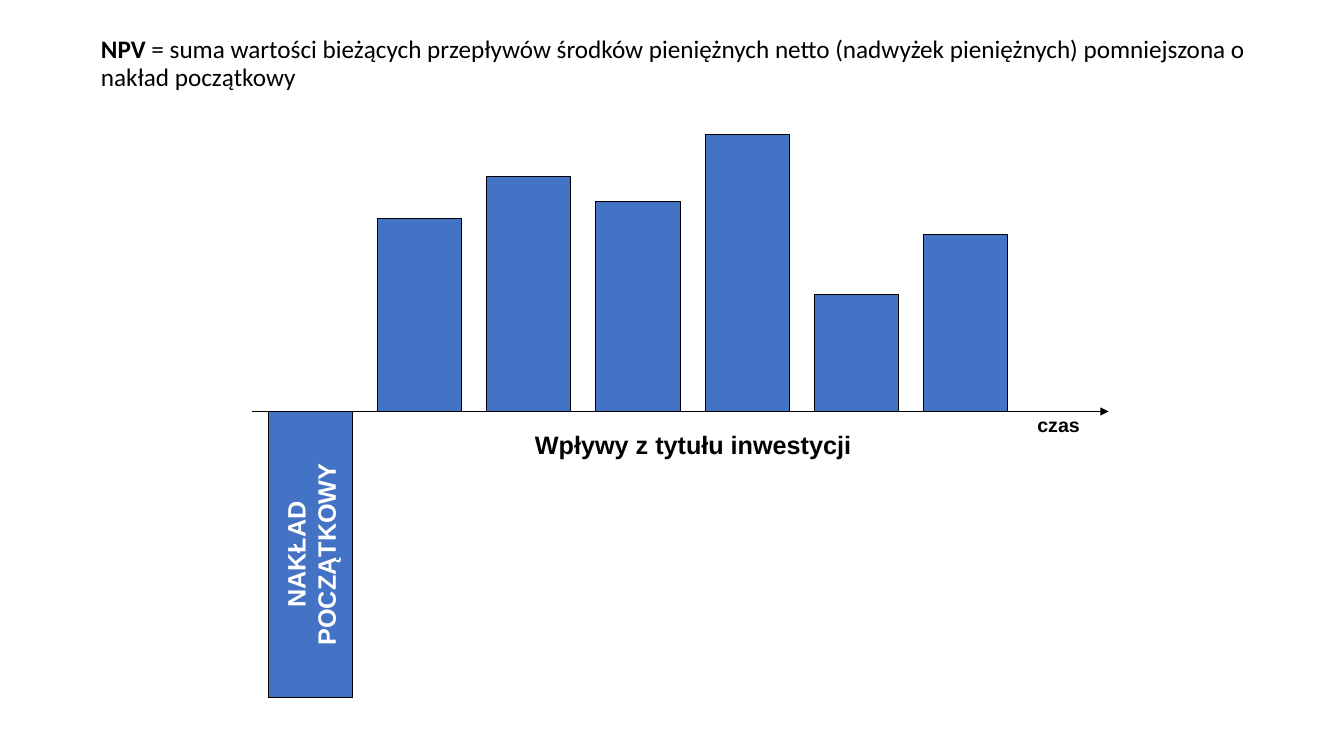
from dataclasses import dataclass

from lxml import etree
from pptx import Presentation
from pptx.dml.color import RGBColor
from pptx.enum import shapes, text
from pptx.oxml import ns
from pptx.util import Cm, Pt

BLACK = RGBColor(0x00, 0x00, 0x00)
WHITE = RGBColor(0xFF, 0xFF, 0xFF)
BLUE = RGBColor(0x44, 0x72, 0xC4)

# Chart geometry in centimetres
AXIS_Y = 10.37
FIRST_SLOT = 6.77
SLOT_STEP = 2.75
BAR_WIDTH = 2.12
OUTLAY = 7.2
INFLOWS = [4.87, 5.93, 5.29, 6.99, 2.96, 4.45]


@dataclass
class Label:
    wording: str
    left: float
    top: float
    width: float
    height: float
    size: int


LABELS = [
    Label("Wpływy z tytułu inwestycji", 9.53, 10.69, 15.88, 1.02, 18),
    Label("czas", 25.7, 10.29, 1.96, 0.84, 14),
]


def style_paragraph(p, size: int, color: RGBColor) -> None:
    p.alignment = text.PP_ALIGN.CENTER
    p.font.name = "Arial"
    p.font.size = Pt(size)
    p.font.bold = True
    p.font.color.rgb = color


def add_bar(s, left: float, top: float, width: float, height: float):
    sp = s.shapes.add_shape(shapes.MSO_SHAPE.RECTANGLE,
                            Cm(left), Cm(top), Cm(width), Cm(height))
    sp.shadow.inherit = False
    sp.fill.solid()
    sp.fill.fore_color.rgb = BLUE
    sp.line.color.rgb = BLACK
    sp.line.width = Pt(0.75)
    return sp


def add_label(s, label: Label) -> None:
    sp = s.shapes.add_textbox(Cm(label.left), Cm(label.top),
                              Cm(label.width), Cm(label.height))
    tf = sp.text_frame
    tf.word_wrap = True
    tf.auto_size = text.MSO_AUTO_SIZE.SHAPE_TO_FIT_TEXT
    tf.text = label.wording
    style_paragraph(tf.paragraphs[0], label.size, BLACK)


def add_time_axis(s) -> None:
    axis = s.shapes.add_connector(shapes.MSO_CONNECTOR.STRAIGHT,
                                  Cm(6.35), Cm(AXIS_Y), Cm(27.94), Cm(AXIS_Y))
    axis.line.color.rgb = BLACK
    axis.line.width = Pt(0.75)
    props = axis.line._get_or_add_ln()
    etree.SubElement(props, ns.qn("a:tailEnd"), type="triangle")
    etree.SubElement(axis._element.spPr, ns.qn("a:effectLst"))


def add_title(s) -> None:
    sp = s.shapes.title
    sp.left, sp.top, sp.width, sp.height = Cm(2.29), Cm(0.2), Cm(29.64), Cm(2.84)
    tf = sp.text_frame
    tf.word_wrap = True
    tf.vertical_anchor = text.MSO_ANCHOR.MIDDLE
    p = tf.paragraphs[0]
    p.alignment = text.PP_ALIGN.LEFT
    p.line_spacing = 0.9
    p.font.name = "Calibri"
    p.font.size = Pt(18)
    p.font.color.rgb = BLACK
    r = p.add_run()
    r.text = "NPV"
    r.font.bold = True
    p.add_run().text = (" = suma wartości bieżących przepływów środków pieniężnych netto "
                        "(nadwyżek pieniężnych) pomniejszona o nakład początkowy")


def add_outlay(s) -> None:
    # The bar is laid out flat around its centre, then turned upright
    center_x = FIRST_SLOT + BAR_WIDTH / 2
    center_y = AXIS_Y + OUTLAY / 2
    sp = add_bar(s, center_x - OUTLAY / 2, center_y - BAR_WIDTH / 2, OUTLAY, BAR_WIDTH)
    sp.rotation = 270
    tf = sp.text_frame
    tf.word_wrap = False
    tf.vertical_anchor = text.MSO_ANCHOR.MIDDLE
    tf.text = "NAKŁAD\nPOCZĄTKOWY"
    for p in tf.paragraphs:
        style_paragraph(p, 18, WHITE)


def main() -> None:
    prs = Presentation()
    prs.slide_width, prs.slide_height = Cm(33.87), Cm(19.05)
    s = prs.slides.add_slide(prs.slide_layouts[5])
    add_title(s)

    # Initial outlay below the axis, inflows above it
    add_outlay(s)
    for slot, height in enumerate(INFLOWS, start=1):
        add_bar(s, FIRST_SLOT + slot * SLOT_STEP, AXIS_Y - height, BAR_WIDTH, height)

    # Time axis and captions
    add_time_axis(s)
    for label in LABELS:
        add_label(s, label)

    prs.save("out.pptx")


if __name__ == "__main__":
    main()
